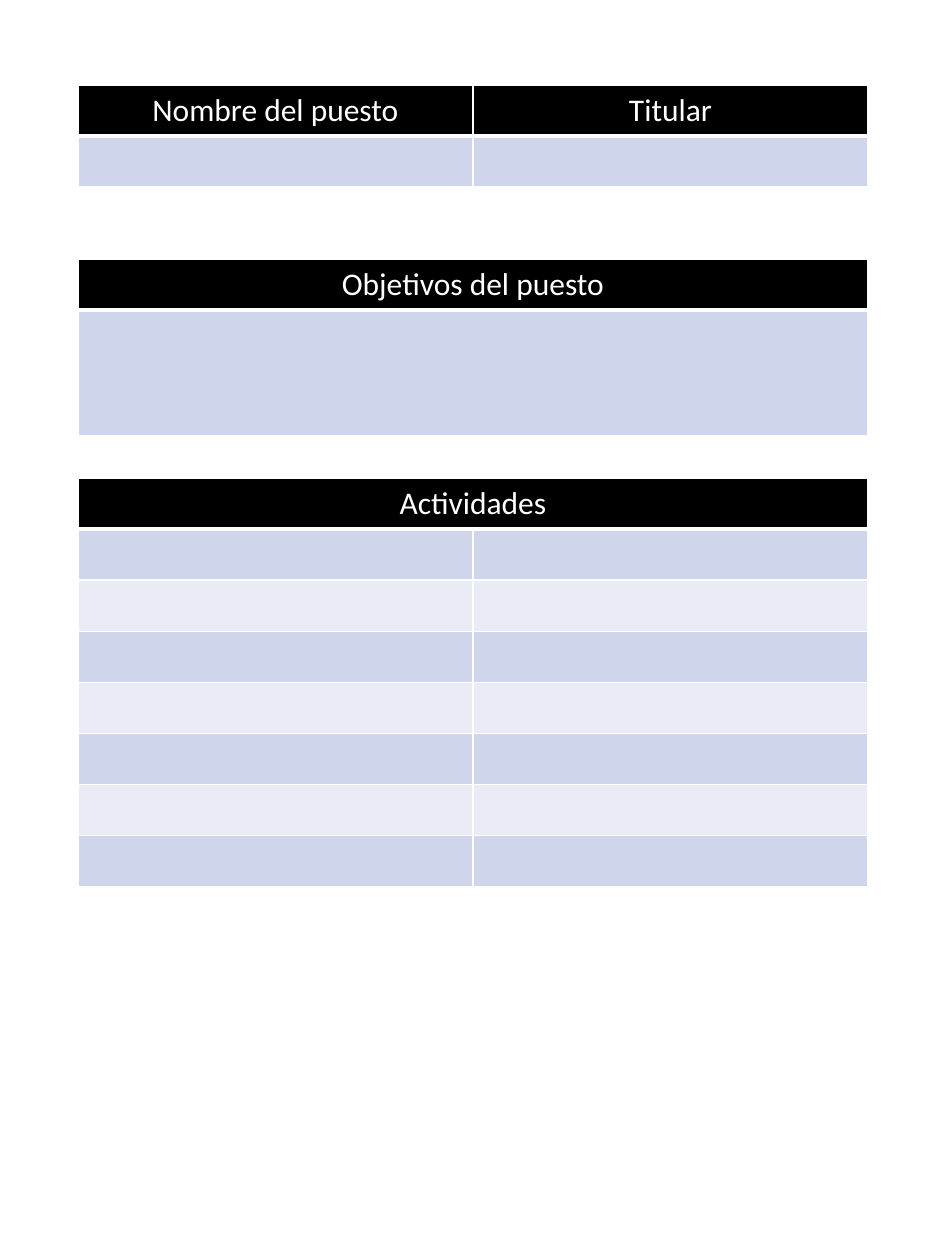
from lxml.etree import SubElement
from pptx import Presentation
from pptx.dml.color import RGBColor
from pptx.enum.text import MSO_ANCHOR, PP_ALIGN
from pptx.oxml.ns import qn
from pptx.util import Pt

PX = 914400 / 126
BLACK = RGBColor(0x00, 0x00, 0x00)
WHITE = RGBColor(0xFF, 0xFF, 0xFF)
BAND_DARK = RGBColor(0xCF, 0xD5, 0xEA)
BAND_LIGHT = RGBColor(0xE9, 0xEB, 0xF5)

LEFT, WIDTH, ROW = 78, 790, 51


def px(length):
    return round(length * PX)


def format_cell(cell, text="", *, fill, bottom=1, anchor=MSO_ANCHOR.TOP):
    """Write centred white text and add white borders, then the fill."""
    cell.vertical_anchor = anchor
    properties = cell._tc.get_or_add_tcPr()
    for side, points in (("lnL", 1), ("lnR", 1), ("lnT", 1), ("lnB", bottom)):
        line = SubElement(properties, qn(f"a:{side}"), w=str(Pt(points)))
        solid = SubElement(line, qn("a:solidFill"))
        SubElement(solid, qn("a:srgbClr"), val=str(WHITE))
    cell.fill.solid()
    cell.fill.fore_color.rgb = fill
    if text:
        cell.text = text
        paragraph = cell.text_frame.paragraphs[0]
        paragraph.alignment = PP_ALIGN.CENTER
        font = paragraph.runs[0].font
        font.name, font.size, font.bold = "Calibri", Pt(18), False
        font.color.rgb = WHITE


prs = Presentation()
prs.slide_width, prs.slide_height = px(945), px(1260)
slide = prs.slides.add_slide(prs.slide_layouts[6])

# top, headings, columns, body row heights, heading anchor
sections = [
    (85, ["Nombre del puesto", "Titular"], 2, [ROW], MSO_ANCHOR.TOP),
    (259, ["Objetivos del puesto"], 1, [126], MSO_ANCHOR.TOP),
    (478, ["Actividades"], 2, [ROW] * 7, MSO_ANCHOR.MIDDLE),
]

for top, headings, column_count, body_heights, anchor in sections:
    heights = [ROW] + body_heights
    table = slide.shapes.add_table(
        len(heights), column_count, px(LEFT), px(top), px(WIDTH), px(sum(heights))
    ).table
    for column in table.columns:
        column.width = px(WIDTH / column_count)
    for row, height in zip(table.rows, heights):
        row.height = px(height)

    if len(headings) < column_count:
        table.cell(0, 0).merge(table.cell(0, column_count - 1))
    for index, heading in enumerate(headings):
        format_cell(table.cell(0, index), heading, fill=BLACK, bottom=3, anchor=anchor)
    for row_index in range(1, len(heights)):
        band = BAND_DARK if row_index % 2 else BAND_LIGHT
        for column_index in range(column_count):
            format_cell(table.cell(row_index, column_index), fill=band)

prs.save("out.pptx")
